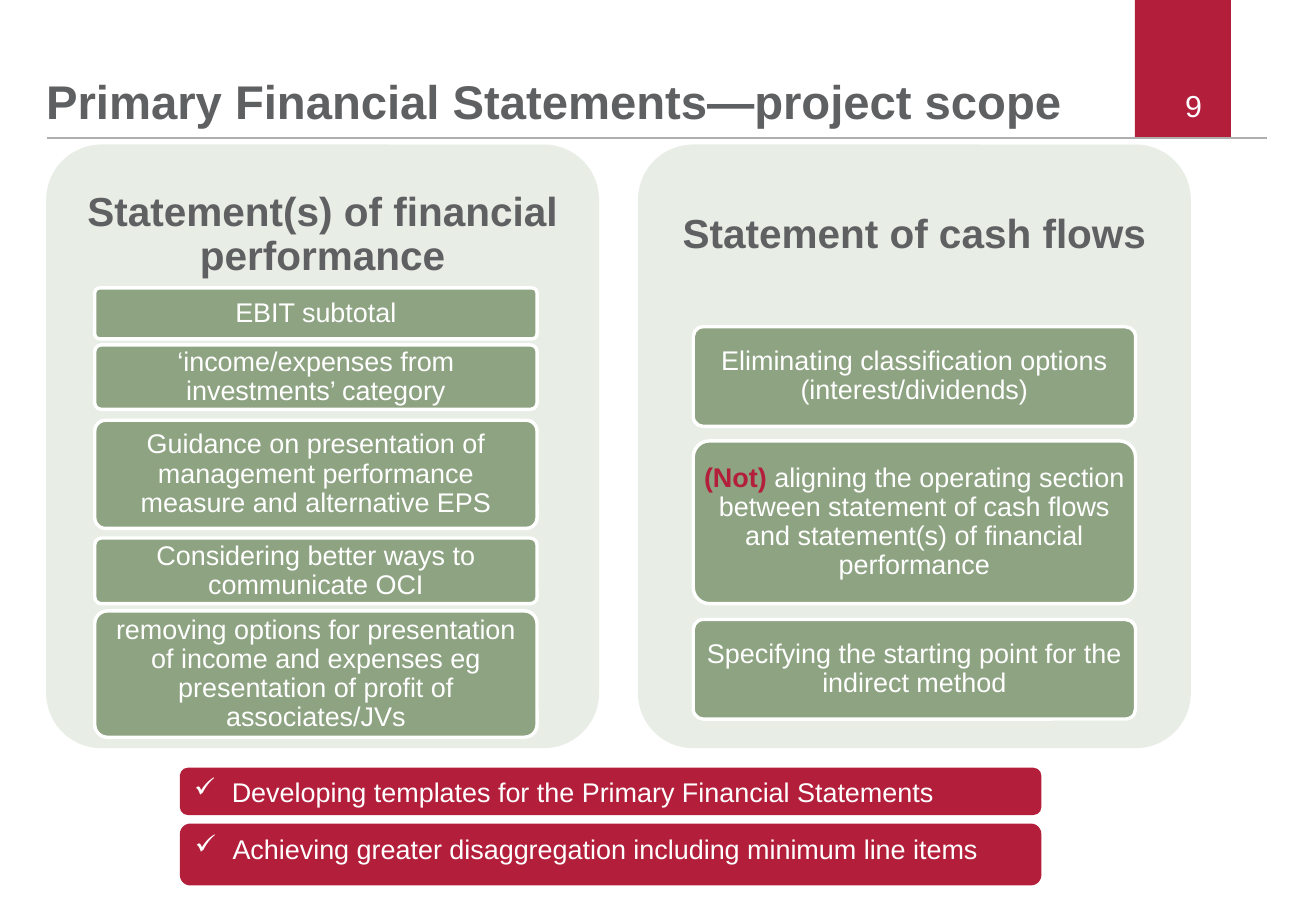
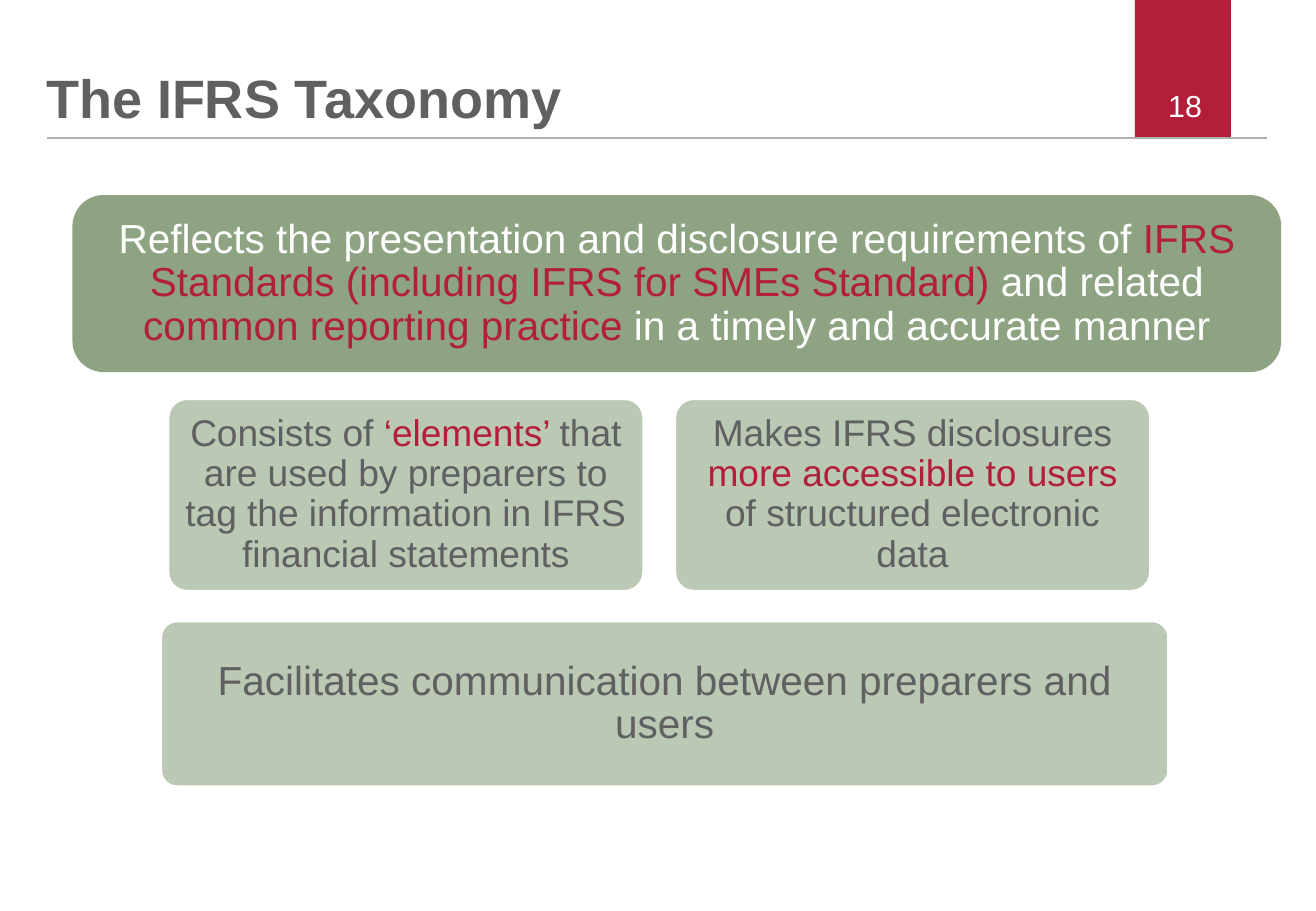
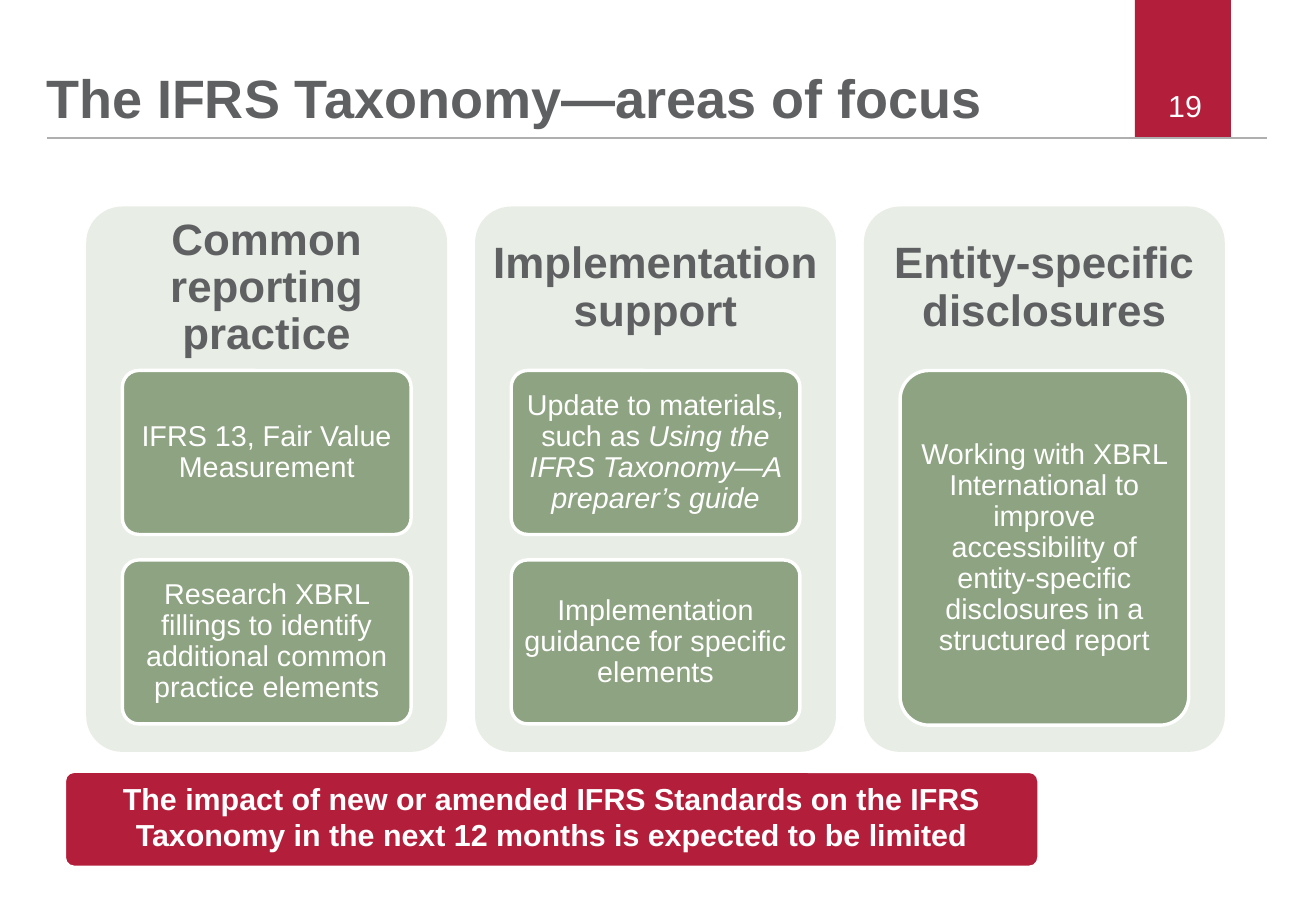
from lxml import etree
from pptx import Presentation
from pptx import oxml
from pptx.dml.color import RGBColor
from pptx.enum import shapes, text
from pptx.oxml.ns import qn
from pptx.util import Inches, Pt

# Shared look
FONT = "Arial"
RED, GREY, RULE, WHITE = "B31E3B", "5F6062", "AFAFB0", "FFFFFF"
GREEN, SAGE, PALE = "8DA381", "BBC8B3", "E8EDE6"
ROUND = shapes.MSO_SHAPE.ROUNDED_RECTANGLE
MID, TOP = text.MSO_ANCHOR.MIDDLE, text.MSO_ANCHOR.TOP
CENTER, LEFT, RIGHT = (text.PP_ALIGN.CENTER, text.PP_ALIGN.LEFT,
                       text.PP_ALIGN.RIGHT)


def color(value):
    return RGBColor.from_string(value)


def style(run, size, hue, bold=False, italic=False):
    font = run.font
    font.name, font.size = FONT, Pt(size)
    font.bold, font.italic = bold, italic
    font.color.rgb = color(hue)


def write(shape, parts, size, hue, bold=False, align=CENTER, anchor=MID,
          pads=(0.1, 0.05, 0.1, 0.05), lead=0.9):
    """Parts is a string, or a list of strings and (string, changes)."""
    frame = shape.text_frame
    frame.word_wrap = True
    frame.vertical_anchor = anchor
    (frame.margin_left, frame.margin_top,
     frame.margin_right, frame.margin_bottom) = map(Inches, pads)
    para = frame.paragraphs[0]
    para.alignment, para.line_spacing = align, lead
    for part in [parts] if isinstance(parts, str) else parts:
        words, change = (part, {}) if isinstance(part, str) else part
        run = para.add_run()
        run.text = words
        style(run, **{"size": size, "hue": hue, "bold": bold, **change})


def block(slide, box, fill, line=None, kind=ROUND, adj=0.1):
    shape = slide.shapes.add_shape(kind, *map(Inches, box))
    shape.shadow.inherit = False
    shape.fill.solid()
    shape.fill.fore_color.rgb = color(fill)
    if line:
        shape.line.color.rgb = color(line)
        shape.line.width = Pt(2)
    else:
        shape.line.fill.background()
    if kind == ROUND:
        shape.adjustments[0] = adj
    return shape


def start(deck, title, number, size=32, width=8.47):
    """Slide with red tab, rule, page number and title."""
    slide = deck.slides.add_slide(deck.slide_layouts[5])
    block(slide, (9.34, 0, 0.79, 1.14), RED, kind=shapes.MSO_SHAPE.RECTANGLE)
    rule = slide.shapes.add_connector(
        shapes.MSO_CONNECTOR.STRAIGHT,
        *map(Inches, (0.39, 1.14, 10.43, 1.14)))
    rule.line.color.rgb = color(RULE)
    rule.line.width = Pt(1.2)
    etree.SubElement(rule._element.spPr, qn("a:effectLst"))
    page = slide.shapes.add_textbox(*map(Inches, (7.46, 0.67, 2.53, 0.4)))
    write(page, str(number), 18, WHITE, align=RIGHT, lead=1)
    head = slide.shapes.title
    head.left, head.top, head.width, head.height = map(
        Inches, (0.38, 0, width, 1.07))
    write(head, title, size, GREY, True, LEFT, text.MSO_ANCHOR.BOTTOM,
          (0, 0, 0, 0))
    head.text_frame.auto_size = text.MSO_AUTO_SIZE.NONE
    return slide


def panel(slide, box, title, size, items, item_size, edge=None):
    """Pale panel: heading in the top 30%, item boxes 80% wide below.
    Items are (offset from panel top, height, text)."""
    left, top, width, height = box
    write(block(slide, box, PALE), title, size, GREY, True,
          pads=(0.02, 0, 0.02, 0.7 * height))
    edge = 0.1 * width if edge is None else edge
    for down, tall, words in items:
        item = block(slide, (left + edge, top + down, 0.8 * width, tall),
                     GREEN, WHITE)
        write(item, words, item_size, WHITE, pads=(0.05, 0.04, 0.05, 0.04))


def check(slide, box, words):
    """Red bar with a tick bullet."""
    bar = block(slide, box, RED, adj=0.17)
    props = bar.text_frame.paragraphs[0]._p.get_or_add_pPr()
    props.set("marL", str(Inches(0.31)))
    props.set("indent", str(-Inches(0.31)))
    tick = oxml.parse_xml(
        '<a:buChar xmlns:a="http://schemas.openxmlformats.org/'
        'drawingml/2006/main" char="✓"/>')
    props.append(tick)
    write(bar, words, 16, WHITE, align=LEFT, anchor=TOP, lead=1)


def scope(deck):
    slide = start(deck, "Primary Financial Statements—project scope", 9,
                  28, 8.97)
    panel(slide, (0.38, 1.19, 4.55, 4.97),
          "Statement(s) of financial performance", 24, [
              (1.18, 0.42, "EBIT subtotal"),
              (1.65, 0.53, "‘income/expenses from investments’ category"),
              (2.27, 0.89, "Guidance on presentation of management "
                           "performance measure and alternative EPS"),
              (3.24, 0.54, "Considering better ways to communicate OCI"),
              (3.84, 1.04, "removing options for presentation of income and "
                           "expenses eg presentation of profit of "
                           "associates/JVs")], 16, edge=0.4)
    panel(slide, (5.25, 1.19, 4.55, 4.97), "Statement of cash flows", 24, [
        (1.5, 0.82, "Eliminating classification options "
                    "(interest/dividends)"),
        (2.44, 1.34, [("(Not) ", {"hue": RED, "bold": True}),
                      "aligning the operating section between statement of "
                      "cash flows and statement(s) of financial "
                      "performance"]),
        (3.91, 0.82, "Specifying the starting point for the indirect "
                     "method")], 16)
    check(slide, (1.48, 6.32, 7.09, 0.39),
          "Developing templates for the Primary Financial Statements")
    check(slide, (1.48, 6.78, 7.09, 0.51),
          "Achieving greater disaggregation including minimum line items")


def about(deck):
    slide = start(deck, "The IFRS Taxonomy", 18)
    red = {"hue": RED}
    lead = block(slide, (0.61, 1.62, 9.92, 1.43), GREEN, GREEN, adj=0.17)
    write(lead, ["Reflects the presentation and disclosure requirements of ",
                 ("IFRS Standards (including IFRS for SMEs Standard) ", red),
                 "and related ", ("common reporting practice ", red),
                 "in a timely and accurate manner"], 24, WHITE)
    # Supporting points
    for box, size, words in [
            ((1.38, 3.28, 3.92, 1.59), 22,
             ["Consists of ", ("‘elements’ ", red),
              "that are used by preparers to tag the information in IFRS "
              "financial statements"]),
            ((5.55, 3.28, 3.92, 1.59), 22,
             ["Makes IFRS disclosures ", ("more accessible to users ", red),
              "of structured electronic data"]),
            ((1.32, 5.11, 8.3, 1.37), 24,
             "Facilitates communication between preparers and users")]:
        write(block(slide, box, SAGE, WHITE), words, size, GREY,
              pads=(0.08, 0.08, 0.08, 0.08))


def focus(deck):
    slide = start(deck, "The IFRS Taxonomy—areas of focus", 19)
    upper, lower, full = (1.35, 1.35), (2.91, 1.35), (1.35, 2.92)
    areas = [
        ("Common reporting practice", [
            (*upper, "IFRS 13, Fair Value Measurement"),
            (*lower, "Research XBRL fillings to identify additional common "
                     "practice elements")]),
        ("Implementation support", [
            (*upper, ["Update to materials, such as ",
                      ("Using the IFRS Taxonomy—A preparer’s guide",
                       {"italic": True})]),
            (*lower, "Implementation guidance for specific elements")]),
        ("Entity-specific disclosures", [
            (*full, "Working with XBRL International to improve "
                    "accessibility of entity-specific disclosures in a "
                    "structured report")])]
    for col, (title, items) in enumerate(areas):
        panel(slide, (0.71 + 3.2 * col, 1.7, 2.97, 4.49), title, 26,
              items, 17)
    # Closing message
    note = block(slide, (0.53, 6.35, 8.02, 0.79), RED, WHITE)
    write(note, "The impact of new or amended IFRS Standards on the IFRS "
                "Taxonomy in the next 12 months is expected to be limited",
          18, WHITE, True, anchor=TOP, lead=1)


def main():
    deck = Presentation()
    deck.slide_width, deck.slide_height = Inches(10.83), Inches(7.5)
    for build in (scope, about, focus):
        build(deck)
    deck.save("out.pptx")


if __name__ == "__main__":
    main()
